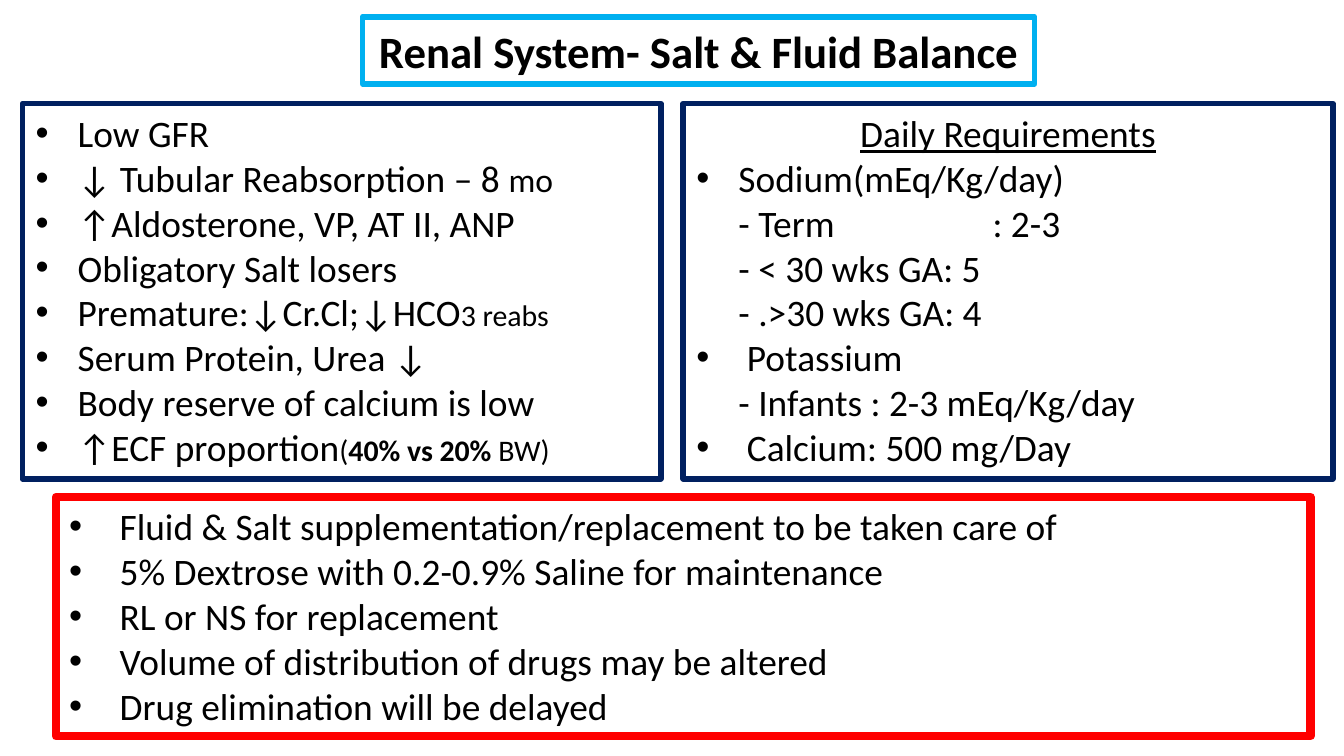
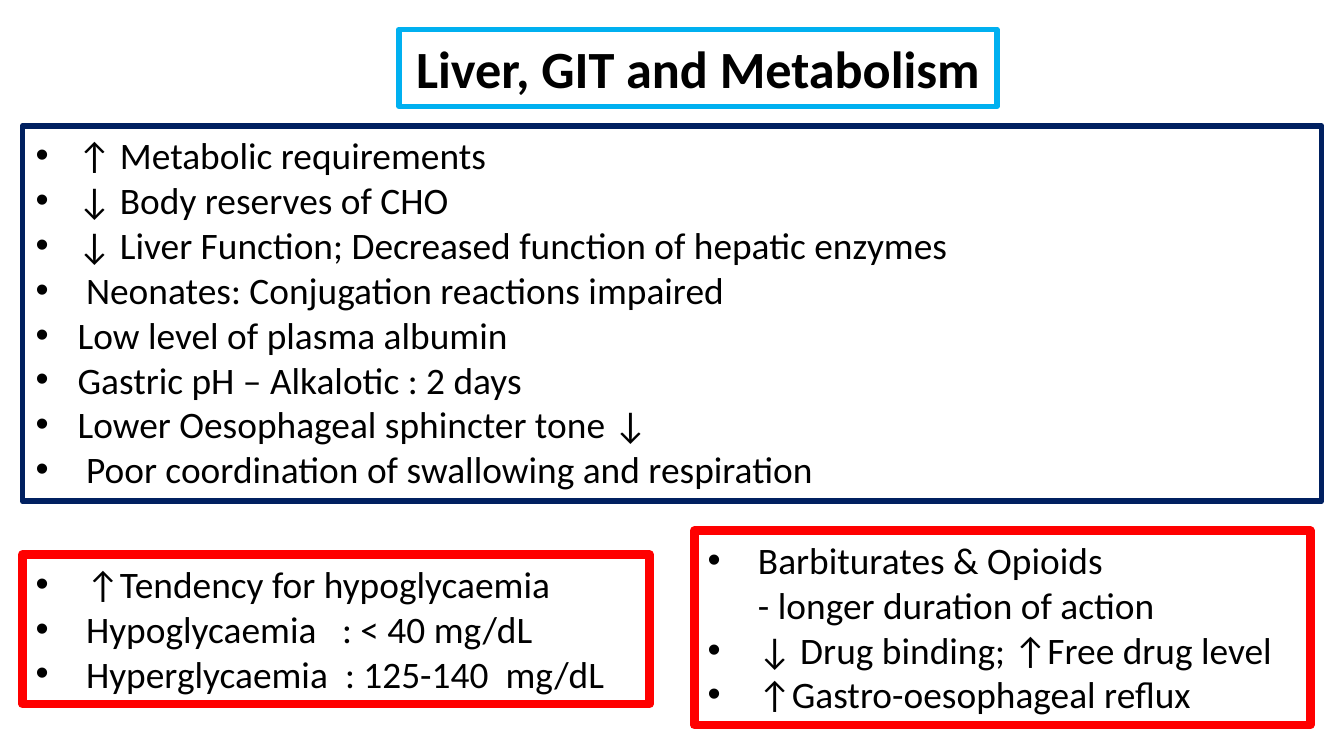
from lxml import etree
from pptx import Presentation
from pptx.dml.color import RGBColor
from pptx.enum.text import MSO_ANCHOR, MSO_AUTO_SIZE, PP_ALIGN
from pptx.oxml.ns import qn
from pptx.util import Pt

PX = 9525  # 96 px to the inch
SLIDE_SIZE = (960, 540)
FONT = "Calibri"
BODY_SIZE = 20
COLOURS = {"text": "000000", "title": "00B0F0", "facts": "002060", "advice": "FF0000"}
LINE_WIDTHS = {"title": 3, "facts": 3, "advice": 4.5}
CENTRE = PP_ALIGN.CENTER
TOP = MSO_ANCHOR.TOP
GROW = MSO_AUTO_SIZE.SHAPE_TO_FIT_TEXT

NEAR, FAR = 30, 36  # text indents
SMALL = {"size": 16}
NARROW_GAP, MEDIUM_GAP, WIDE_GAP = ((" ", {"spacing": points}) for points in (4.5, 9, 80))


def bullet(*spans, indent=NEAR):
    return {"spans": spans, "indent": indent, "bullet": True}


def far_bullet(*spans):
    return bullet(*spans, indent=FAR)


def detail(*spans, indent=NEAR):
    return {"spans": spans, "indent": indent, "bullet": False}


def heading(text, **style):
    return {"spans": [(text, style)], "align": CENTRE}


# Each box: (kind, (left, top, width, height), paragraphs)
SLIDES = [
    [
        ("title", (259, 12, 480, 48),
         [heading("Renal System- Salt & Fluid Balance", size=24, bold=True)]),
        ("facts", (16, 74, 456, 268), [
            bullet("Low GFR"),
            bullet("↓ Tubular Reabsorption – 8 ", ("mo", {"size": 18})),
            bullet("↑Aldosterone, VP, AT II, ANP"),
            bullet("Obligatory Salt losers"),
            bullet("Premature:↓Cr.Cl;↓HCO", ("3 reabs", SMALL)),
            bullet("Serum Protein, Urea ↓"),
            bullet("Body reserve of calcium is low"),
            bullet("↑ECF proportion", ("(", SMALL),
                   ("40% vs 20% ", {"size": 16, "bold": True}), ("BW)", SMALL)),
        ]),
        ("facts", (488, 74, 464, 268), [
            heading("Daily Requirements", underline=True),
            bullet("Sodium(mEq/Kg/day)"),
            detail("- Term", WIDE_GAP, ": 2-3"),
            detail("- < 30 wks GA: 5"),
            detail("- .>30 wks GA: 4"),
            far_bullet("Potassium"),
            detail("- Infants : 2-3 mEq/Kg/day"),
            far_bullet("Calcium: 500 mg/Day"),
        ]),
        ("advice", (40, 355, 896, 171), [
            far_bullet("Fluid & Salt supplementation/replacement to be taken care of"),
            far_bullet("5% Dextrose with 0.2-0.9% Saline for maintenance"),
            far_bullet("RL or NS for replacement"),
            far_bullet("Volume of distribution of drugs may be altered"),
            far_bullet("Drug elimination will be delayed"),
        ]),
    ],
    [
        ("title", (285, 21, 427, 55),
         [heading("Liver, GIT and Metabolism", size=28, bold=True)]),
        ("facts", (16, 90, 928, 268), [
            bullet("↑ Metabolic requirements"),
            bullet("↓ Body reserves of CHO"),
            bullet("↓ Liver Function; Decreased function of hepatic enzymes"),
            far_bullet("Neonates: Conjugation reactions impaired"),
            bullet("Low level of plasma albumin"),
            bullet("Gastric pH – Alkalotic : 2 days"),
            bullet("Lower Oesophageal sphincter tone ↓"),
            far_bullet("Poor coordination of swallowing and respiration"),
        ]),
        ("advice", (16, 396, 448, 107), [
            far_bullet("↑Tendency for hypoglycaemia"),
            far_bullet("Hypoglycaemia", MEDIUM_GAP, ": < 40 mg/dL"),
            far_bullet("Hyperglycaemia", NARROW_GAP, ": 125-140", NARROW_GAP, "mg/dL"),
        ]),
        ("advice", (496, 379, 440, 139), [
            far_bullet("Barbiturates & Opioids"),
            detail("- longer duration of action", indent=FAR),
            far_bullet("↓ Drug binding; ↑Free drug level"),
            far_bullet("↑Gastro-oesophageal reflux"),
        ]),
    ],
]


def colour(name):
    return RGBColor.from_string(COLOURS[name])


def set_indent(para, indent, has_bullet):
    """Hang the text behind a bullet, or indent a detail to line up with it."""
    properties = para._p.get_or_add_pPr()
    properties.set("marL", str(indent * PX))
    properties.set("indent", str(-indent * PX if has_bullet else 0))
    if has_bullet:
        etree.SubElement(properties, qn("a:buFont"), typeface="Arial")
        etree.SubElement(properties, qn("a:buChar"), char="•")
    else:
        etree.SubElement(properties, qn("a:buNone"))


def add_span(para, text, size=BODY_SIZE, bold=False, underline=False, spacing=0):
    span = para.add_run()
    span.text = text
    font = span.font
    font.name = FONT
    font.size = Pt(size)
    font.bold = bold
    font.underline = underline
    font.color.rgb = colour("text")
    if spacing:
        span._r.get_or_add_rPr().set("spc", str(int(spacing * 100)))


def fill_paragraph(para, content):
    para.alignment = content.get("align")
    if "indent" in content:
        set_indent(para, content["indent"], content["bullet"])
    for span in content["spans"]:
        text, style = (span, {}) if isinstance(span, str) else span
        add_span(para, text, **style)


def add_box(page, kind, place, paragraphs):
    box = page.shapes.add_textbox(*(length * PX for length in place))
    box.line.color.rgb = colour(kind)
    box.line.width = Pt(LINE_WIDTHS[kind])
    frame = box.text_frame
    frame.word_wrap = kind != "title"
    frame.auto_size = GROW
    frame.vertical_anchor = TOP
    for index, content in enumerate(paragraphs):
        para = frame.add_paragraph() if index else frame.paragraphs[0]
        fill_paragraph(para, content)


def main():
    deck = Presentation()
    deck.slide_width, deck.slide_height = (length * PX for length in SLIDE_SIZE)
    blank = deck.slide_layouts[6]
    for boxes in SLIDES:
        page = deck.slides.add_slide(blank)
        for kind, place, paragraphs in boxes:
            add_box(page, kind, place, paragraphs)
    deck.save("out.pptx")


if __name__ == "__main__":
    main()
